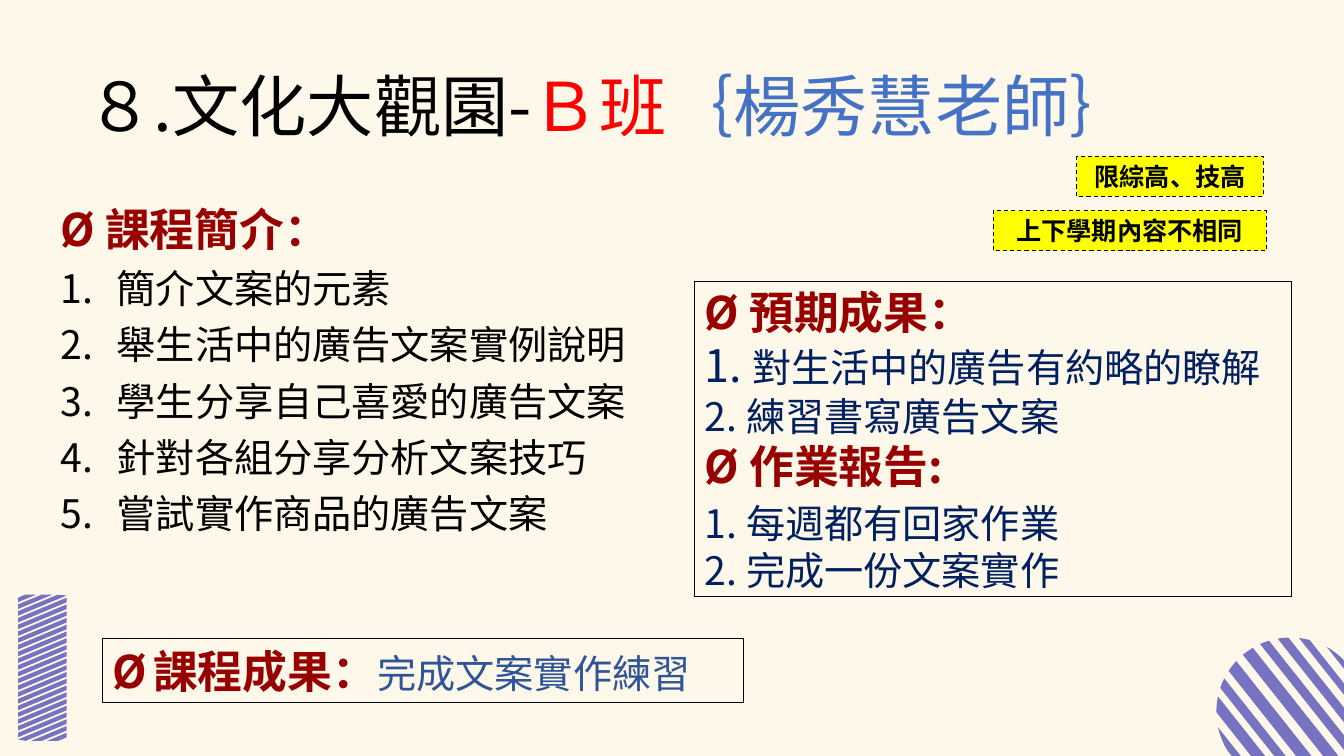
from math import asin, cos, radians, sin, sqrt
from pptx import Presentation
from pptx.dml.color import RGBColor
from pptx.enum.dml import MSO_LINE_DASH_STYLE as Dash
from pptx.enum.shapes import MSO_SHAPE as Preset
from pptx.enum.text import MSO_ANCHOR as Anchor, PP_ALIGN as Align
from pptx.oxml.ns import qn
from pptx.util import Inches, Pt

THEME = {
    "font": "Noto Sans CJK SC",
    "colors": {
        "paper": "FEF8EA", "stripe": "7773C0", "ink": "000000", "red": "FF0000",
        "blue": "4472C4", "heading": "980000", "navy": "002060",
        "steel": "2F5597", "yellow": "FFFF00",
    },
    "sizes": {"title": 48, "heading": 32, "body": 28, "tag": 18},
    "line_height": 1.2,
}

TITLE = [[("８.文化大觀園-", "title", "ink"), ("Ｂ班", "title", "red"),
          ("｛楊秀慧老師｝", "title", "blue")]]
INTRO_HEADING = "Ø 課程簡介："
INTRO_ITEMS = ["簡介文案的元素", "舉生活中的廣告文案實例說明", "學生分享自己喜愛的廣告文案",
               "針對各組分享分析文案技巧", "嘗試實作商品的廣告文案"]
GOALS = [
    [("Ø 預期成果：\n", "heading", "heading"), ("1. ", "heading", "navy"),
     ("對生活中的廣告有約略的瞭解", "body", "navy")],
    [("2. 練習書寫廣告文案", "body", "navy")],
    [("Ø 作業報告:\n", "heading", "heading"), ("1. 每週都有回家作業", "body", "navy")],
    [("2. 完成一份文案實作", "body", "navy")],
]
RESULT = [[("Ø", "heading", "heading"), (" ", "tag", "heading"),
           ("課程成果：", "heading", "heading"), ("完成文案實作練習", "body", "steel")]]
TAGS = [("限綜高、技高", (10.68, 1.55, 1.85, 0.4)),
        ("上下學期內容不相同", (9.85, 2.09, 2.71, 0.4))]

CIRCLE = {"x": 12.8, "y": 7.06, "radius": 0.735, "angle": 51.6}
CIRCLE_BANDS = [(-0.73, -0.66), (-0.58, -0.47), (-0.4, -0.31), (-0.23, -0.11),
                (-0.02, 0.1), (0.18, 0.27), (0.35, 0.44), (0.52, 0.59), (0.68, 0.73)]
PANEL = {"left": 0.18, "right": 0.66, "top": 5.9, "bottom": 7.35,
         "drop": 0.2, "pitch": 0.067, "thickness": 0.045}


def color(name):
    return RGBColor.from_string(THEME["colors"][name])


def circle_stripes():
    turn, radius = radians(CIRCLE["angle"]), CIRCLE["radius"]

    def point(offset, side):
        along = side * sqrt(radius ** 2 - offset ** 2)
        return (CIRCLE["x"] + along * cos(turn) + offset * sin(turn),
                CIRCLE["y"] + along * sin(turn) - offset * cos(turn))

    for low, high in CIRCLE_BANDS:
        start, stop = asin(low / radius), asin(high / radius)
        offsets = [radius * sin(start + (stop - start) * i / 8) for i in range(9)]
        yield ([point(offset, 1) for offset in offsets]
               + [point(offset, -1) for offset in reversed(offsets)])


def panel_stripes():
    slope = PANEL["drop"] / (PANEL["right"] - PANEL["left"])

    def edge(start):
        heights = (max(start, PANEL["top"]), min(start + PANEL["drop"], PANEL["bottom"]))
        return [(PANEL["right"] - (y - start) / slope, y) for y in heights]

    for index in range(-3, 21):
        start = PANEL["top"] + 0.03 + PANEL["pitch"] * index
        yield edge(start) + edge(start + PANEL["thickness"])[::-1]


def add_stripes(slide, stripes):
    outlines = [[(Inches(x), Inches(y)) for x, y in stripe] for stripe in stripes]
    builder = slide.shapes.build_freeform(*outlines[0][0])
    for index, outline in enumerate(outlines):
        if index:
            builder.move_to(*outline[0])
        builder.add_line_segments(outline[1:], close=True)
    shape = builder.convert_to_shape()
    shape.shadow.inherit = False
    shape.fill.solid()
    shape.fill.fore_color.rgb = color("stripe")
    shape.line.fill.background()


def style(font, size, tint, bold):
    font.name = THEME["font"]
    font.size = Pt(THEME["sizes"][size])
    font.bold = bold
    font.color.rgb = color(tint)


def add_span(para, text, size, tint, bold=None):
    span = para.add_run()
    span.text = text.rstrip("\n")
    style(span.font, size, tint, tint == "heading" if bold is None else bold)
    properties = span.font._element
    east = properties.makeelement(qn("a:ea"), {"typeface": THEME["font"]})
    properties.find(qn("a:latin")).addnext(east)
    if text.endswith("\n"):
        para.add_line_break()


def fill_text(box, paragraphs, align=Align.LEFT, spacing=1.0, bold=None):
    frame = box.text_frame
    frame.word_wrap = True
    frame.vertical_anchor = Anchor.MIDDLE
    for index, spans in enumerate(paragraphs):
        para = frame.add_paragraph() if index else frame.paragraphs[0]
        para.alignment = align
        largest = max(THEME["sizes"][size] for _, size, _ in spans)
        para.line_spacing = Pt(round(largest * THEME["line_height"] * spacing, 1))
        for text, size, tint in spans:
            add_span(para, text, size, tint, bold)


def add_text(slide, place):
    box = slide.shapes.add_textbox(*map(Inches, place))
    frame = box.text_frame
    frame.margin_left = frame.margin_right = Inches(0.1)
    frame.margin_top = frame.margin_bottom = Inches(0.1)
    return box


def add_frame(slide, place, fill=None, dash=None):
    box = slide.shapes.add_shape(Preset.RECTANGLE, *map(Inches, place))
    box.shadow.inherit = False
    if fill:
        box.fill.solid()
        box.fill.fore_color.rgb = color(fill)
    else:
        box.fill.background()
    box.line.color.rgb = color("ink")
    box.line.width = Pt(0.75)
    if dash:
        box.line.dash_style = dash
    return box


def add_intro(slide):
    box = add_text(slide, (0.5, 1.96, 11.61, 3.56))
    paragraphs = [[(INTRO_HEADING, "heading", "heading")]]
    paragraphs += [[(item, "body", "ink")] for item in INTRO_ITEMS]
    fill_text(box, paragraphs, spacing=0.9)
    box.text_frame.vertical_anchor = Anchor.TOP
    heading, *items = box.text_frame.paragraphs
    heading.line_spacing, heading.space_before = Pt(34), Pt(2)
    for para in items:
        para.space_before = Pt(10)
        properties = para._p.get_or_add_pPr()
        properties.set("marL", str(Inches(0.56)))
        properties.set("indent", str(-Inches(0.56)))
        number = properties.makeelement(qn("a:buAutoNum"), {"type": "arabicPeriod"})
        properties.append(number)


def main():
    deck = Presentation()
    deck.slide_width, deck.slide_height = Inches(13.33), Inches(7.5)
    page = deck.slides.add_slide(deck.slide_layouts[6])
    page.background.fill.solid()
    page.background.fill.fore_color.rgb = color("paper")
    add_stripes(page, circle_stripes())
    add_stripes(page, panel_stripes())
    fill_text(add_text(page, (0.76, 0.61, 12.25, 0.94)), TITLE, spacing=0.9)
    add_intro(page)
    fill_text(add_frame(page, (1.02, 6.33, 6.35, 0.64)), RESULT, Align.JUSTIFY)
    fill_text(add_frame(page, (6.89, 2.79, 5.92, 3.13)), GOALS)
    for label, place in TAGS:
        box = add_frame(page, place, "yellow", Dash.DASH)
        fill_text(box, [[(label, "tag", "ink")]], Align.CENTER, bold=True)
    deck.save("out.pptx")


if __name__ == "__main__":
    main()
